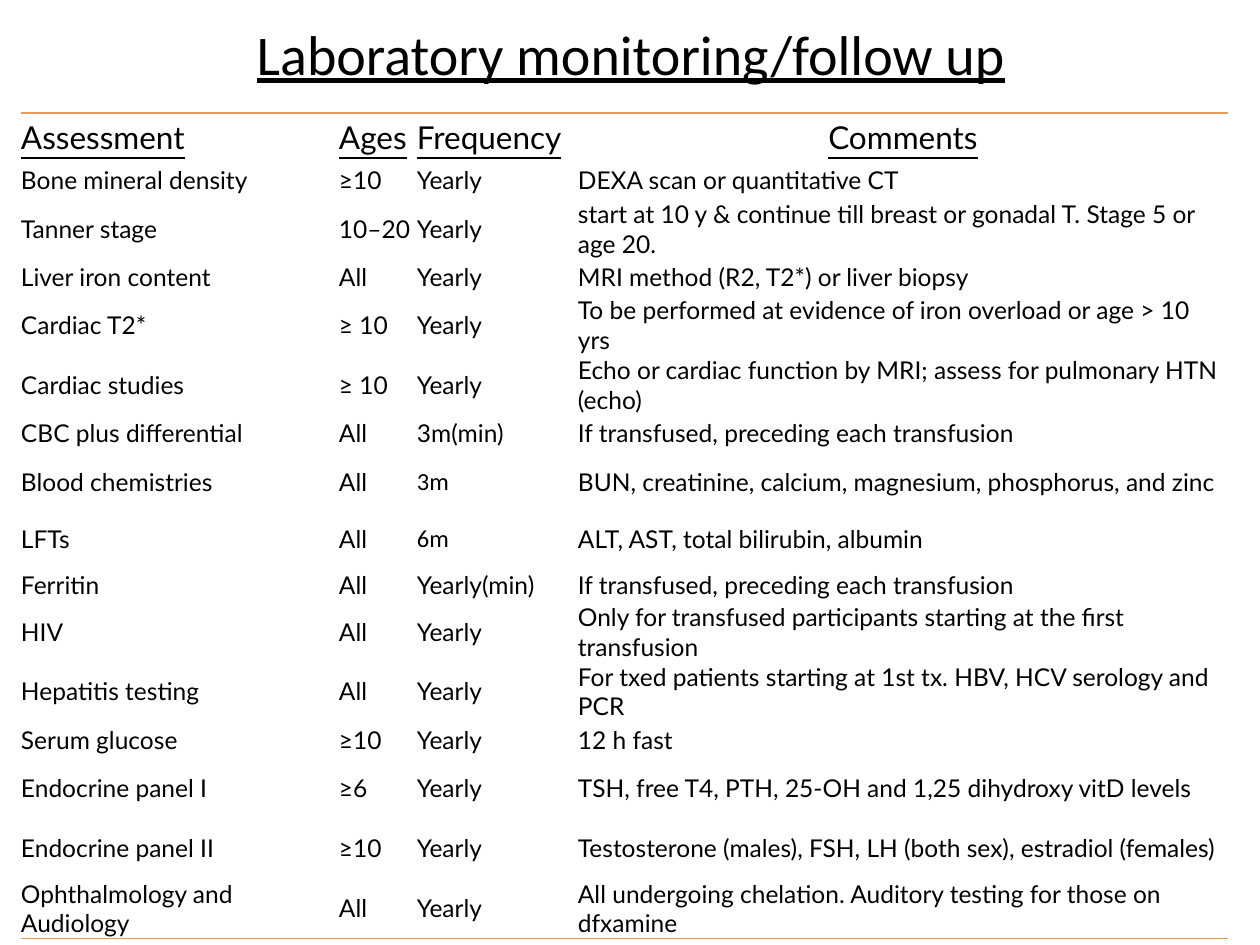
from lxml import etree
from pptx import Presentation
from pptx.dml.color import RGBColor
from pptx.enum.text import MSO_ANCHOR, PP_ALIGN
from pptx.oxml.ns import qn
from pptx.util import Emu, Pt

EMU_PER_PX = 914400 / 126
MIDDLE = MSO_ANCHOR.MIDDLE
LEFT, CENTER = PP_ALIGN.LEFT, PP_ALIGN.CENTER
TITLE_ONLY = 5
NO_STYLE_NO_GRID = "{2D5ABB26-0587-4C30-8999-92F81FD0307C}"
BLACK, ORANGE = "000000", "F79646"
BODY_FONT, TITLE_FONT = "Lato", "Calibri"

COLUMN_WIDTHS = [318, 78, 161, 650]
ROW_HEIGHTS = [49, 37, 60, 36, 60, 60, 37, 60, 55, 36, 48, 60, 37, 60, 60, 60]
HEADER = ("Assessment", "Ages", "Frequency", "Comments")
ASSESSMENTS = [
    ("Bone mineral density", "≥10", "Yearly", "DEXA scan or quantitative CT"),
    ("Tanner stage", "10–20", "Yearly",
     "start at 10 y & continue till breast or gonadal T. Stage 5 or age 20."),
    ("Liver iron content", "All", "Yearly", "MRI method (R2, T2*) or liver biopsy"),
    ("Cardiac T2*", "≥ 10", "Yearly",
     "To be performed at evidence of iron overload or age > 10 yrs"),
    ("Cardiac studies", "≥ 10", "Yearly",
     "Echo or cardiac function by MRI; assess for pulmonary HTN (echo)"),
    ("CBC plus differential", "All", "3m(min)",
     "If transfused, preceding each transfusion"),
    ("Blood chemistries", "All", "3m",
     "BUN, creatinine, calcium, magnesium, phosphorus, and zinc"),
    ("LFTs", "All", "6m", "ALT, AST, total bilirubin, albumin"),
    ("Ferritin", "All", "Yearly(min)", "If transfused, preceding each transfusion"),
    ("HIV", "All", "Yearly",
     "Only for transfused participants starting at the first transfusion"),
    ("Hepatitis testing", "All", "Yearly",
     "For txed patients starting at 1st tx. HBV, HCV serology and PCR"),
    ("Serum glucose", "≥10", "Yearly", "12 h fast"),
    ("Endocrine panel I", "≥6", "Yearly",
     "TSH, free T4, PTH, 25-OH and 1,25 dihydroxy vitD levels"),
    ("Endocrine panel II", "≥10", "Yearly",
     "Testosterone (males), FSH, LH (both sex), estradiol (females)"),
    ("Ophthalmology and Audiology", "All", "Yearly",
     "All undergoing chelation. Auditory testing for those on dfxamine"),
]
CALIBRI_ENTRIES = {"3m", "6m"}


def px(length):
    return Emu(round(length * EMU_PER_PX))


def color(hex_string):
    return RGBColor.from_string(hex_string)


def write_text(frame, text, size=14, font=BODY_FONT, underline=False,
               align=LEFT, line_spacing=None):
    paragraph = frame.paragraphs[0]
    paragraph.alignment = align
    paragraph.line_spacing = line_spacing
    run = paragraph.add_run()
    run.text = text
    run.font.size = Pt(size)
    run.font.name = font
    run.font.underline = underline
    run.font.color.rgb = color(BLACK)


def add_border(cell, side):
    """Draw a 1 pt line on one side of a cell; side is lnT or lnB."""
    properties = cell._tc.get_or_add_tcPr()
    line = etree.Element(qn(f"a:{side}"), w=str(Pt(1)))
    fill = etree.SubElement(line, qn("a:solidFill"))
    etree.SubElement(fill, qn("a:srgbClr"), val=ORANGE)
    properties.insert(0, line)


def place_title(slide, left, top, width, height):
    title = slide.shapes.title
    title.left, title.top = px(left), px(top)
    title.width, title.height = px(width), px(height)
    frame = title.text_frame
    frame.vertical_anchor = MIDDLE
    frame.word_wrap = True
    write_text(frame, "Laboratory monitoring/follow up", size=32, font=TITLE_FONT,
               underline=True, align=CENTER, line_spacing=0.9)


def format_cell(cell):
    cell.margin_left = cell.margin_right = cell.margin_top = cell.margin_bottom = 0
    cell.vertical_anchor = MIDDLE
    cell.fill.background()


def place_monitoring_table(slide, left, top):
    rows = [HEADER] + ASSESSMENTS
    frame = slide.shapes.add_table(len(rows), len(HEADER), px(left), px(top),
                                   px(sum(COLUMN_WIDTHS)), px(sum(ROW_HEIGHTS)))
    table = frame.table
    table.first_row = table.horz_banding = False
    table._tbl.tblPr.find(qn("a:tableStyleId")).text = NO_STYLE_NO_GRID
    for column, width in zip(table.columns, COLUMN_WIDTHS):
        column.width = px(width)
    for row, height in zip(table.rows, ROW_HEIGHTS):
        row.height = px(height)

    for row, entries in zip(table.rows, rows):
        for cell, text in zip(row.cells, entries):
            format_cell(cell)
            if entries is HEADER:
                write_text(cell.text_frame, text, size=18, underline=True,
                           align=CENTER if text == "Comments" else LEFT)
            else:
                font = TITLE_FONT if text in CALIBRI_ENTRIES else BODY_FONT
                write_text(cell.text_frame, text, font=font)
    for column in range(len(HEADER)):
        add_border(table.cell(0, column), "lnT")
        add_border(table.cell(len(rows) - 1, column), "lnB")


def main():
    presentation = Presentation()
    presentation.slide_width, presentation.slide_height = px(1260), px(945)
    slide = presentation.slides.add_slide(presentation.slide_layouts[TITLE_ONLY])
    place_title(slide, 86, -1, 1090, 116)
    place_monitoring_table(slide, 21, 113)
    presentation.save("out.pptx")


if __name__ == "__main__":
    main()
